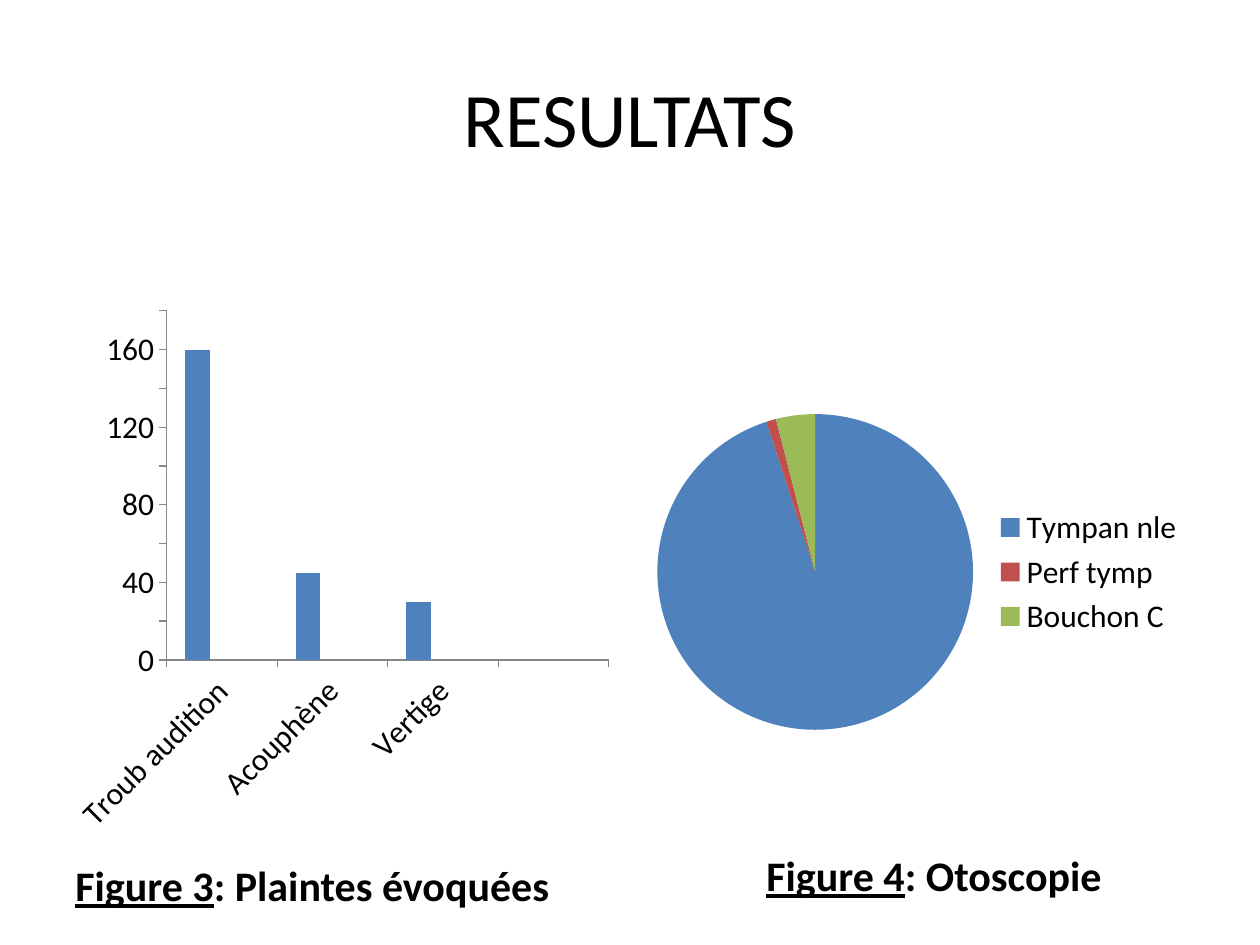
import pptx
import pptx.chart.data
import pptx.dml.color
import pptx.enum.chart
import pptx.enum.text
import pptx.util

RGBColor = pptx.dml.color.RGBColor
BLACK = RGBColor(0x00, 0x00, 0x00)
AXIS_GRAY = RGBColor(0x86, 0x86, 0x86)
BLUE = RGBColor(0x4F, 0x81, 0xBD)
RED = RGBColor(0xC0, 0x50, 0x4D)
GREEN = RGBColor(0x9B, 0xBB, 0x59)
PALETTE = (BLUE, RED, GREEN)

ChartType = pptx.enum.chart.XL_CHART_TYPE
TickMark = pptx.enum.chart.XL_TICK_MARK
Anchor = pptx.enum.text.MSO_ANCHOR
Align = pptx.enum.text.PP_ALIGN

PX_PER_INCH = 126
FONT = "Calibri"


def px(length):
    return pptx.util.Emu(round(length * 914400 / PX_PER_INCH))


def apply_format(target, values):
    for name, value in values.items():
        setattr(target, name, value)


def format_font(font, size, **values):
    apply_format(font, {"name": FONT, "size": pptx.util.Pt(size), **values})
    font.color.rgb = BLACK


def add_text(slide, box, runs, size, anchor, align, indent=0):
    """Place one paragraph; runs are (text, font values) pairs."""
    shape = slide.shapes.add_textbox(*map(px, box))
    apply_format(shape.text_frame, {"word_wrap": True, "vertical_anchor": anchor})
    paragraph = shape.text_frame.paragraphs[0]
    paragraph.alignment = align
    if indent:
        paragraph._p.get_or_add_pPr().set("marL", str(px(indent)))
    for text, values in runs:
        run = paragraph.add_run()
        run.text = text
        format_font(run.font, size, **values)


def add_caption(slide, box, label, text, indent=0):
    runs = [(label, {"bold": True, "underline": True}), (text, {"bold": True})]
    add_text(slide, box, runs, 24, Anchor.BOTTOM, Align.LEFT, indent)


def add_chart(slide, box, chart_type, categories, series):
    data = pptx.chart.data.CategoryChartData()
    data.categories = categories
    for name, values in series:
        data.add_series(name, values)
    chart = slide.shapes.add_chart(chart_type, *map(px, box), data).chart
    chart.has_title = False
    format_font(chart.font, 18)
    return chart


def add_complaints_chart(slide, box):
    empty = (None,) * 4
    chart = add_chart(
        slide, box, ChartType.COLUMN_CLUSTERED,
        ("Troub audition", "Acouphène", "Vertige", ""),
        (("Series 1", (160, 45, 30, None)), ("Series 2", empty), ("Series 3", empty)),
    )
    chart.has_legend = False
    plot = chart.plots[0]
    apply_format(plot, {"gap_width": 150, "overlap": 0, "vary_by_categories": False})
    for series, color in zip(plot.series, PALETTE):
        series.format.fill.solid()
        series.format.fill.fore_color.rgb = color

    # Axes
    for axis in (chart.category_axis, chart.value_axis):
        apply_format(axis, {"has_major_gridlines": False,
                            "major_tick_mark": TickMark.OUTSIDE,
                            "minor_tick_mark": TickMark.NONE})
        axis.format.line.color.rgb = AXIS_GRAY
        axis.format.line.width = pptx.util.Pt(0.75)
        format_font(axis.tick_labels.font, 18)
    apply_format(chart.value_axis,
                 {"minimum_scale": 0, "maximum_scale": 180, "major_unit": 20})
    # Slanted category labels
    chart.category_axis._element.txPr.bodyPr.set("rot", str(-45 * 60000))


def add_otoscopy_chart(slide, box):
    chart = add_chart(
        slide, box, ChartType.PIE,
        ("Tympan nle", "Perf tymp", "Bouchon C"),
        (("Series 1", (95, 1, 4)),),
    )
    chart.has_legend = True
    apply_format(chart.legend, {
        "position": pptx.enum.chart.XL_LEGEND_POSITION.RIGHT,
        "include_in_layout": False})
    format_font(chart.legend.font, 18)
    plot = chart.plots[0]
    plot.vary_by_categories = True
    series = plot.series[0]
    for index, color in enumerate(PALETTE):
        point = series.points[index]
        point.format.fill.solid()
        point.format.fill.fore_color.rgb = color
        # Pull each slice away from the centre
        explosion = point.format._element if hasattr(point.format, "_element") else None
        if explosion is None:
            data_point = series._element.get_or_add_dPt_for_point(index)
            explosion = pptx.oxml.parse_xml(
                '<c:explosion xmlns:c="http://schemas.openxmlformats.org/'
                'drawingml/2006/chart" val="25"/>')
            data_point.spPr.addprevious(explosion)


def add_figure(slide, box, draw_chart, label, text, indent=0):
    """A caption at the foot of the box, with its chart above."""
    left, top, width, height = box
    add_caption(slide, box, label, text, indent)
    draw_chart(slide, (left, top + 88, width, 544))


def main():
    presentation = pptx.Presentation()
    apply_format(presentation, {"slide_width": px(1260), "slide_height": px(945)})
    slide = presentation.slides.add_slide(presentation.slide_layouts[6])

    # Title
    add_text(slide, (63, 38, 1134, 158), [("RESULTATS", {})], 44,
             Anchor.MIDDLE, Align.CENTER)
    # Two figures side by side
    add_figure(slide, (63, 212, 557, 704), add_complaints_chart,
               "Figure 3", ": Plaintes évoquées")
    add_figure(slide, (640, 212, 557, 694), add_otoscopy_chart,
               "Figure 4", ": Otoscopie", indent=114)
    presentation.save("out.pptx")


if __name__ == "__main__":
    main()
